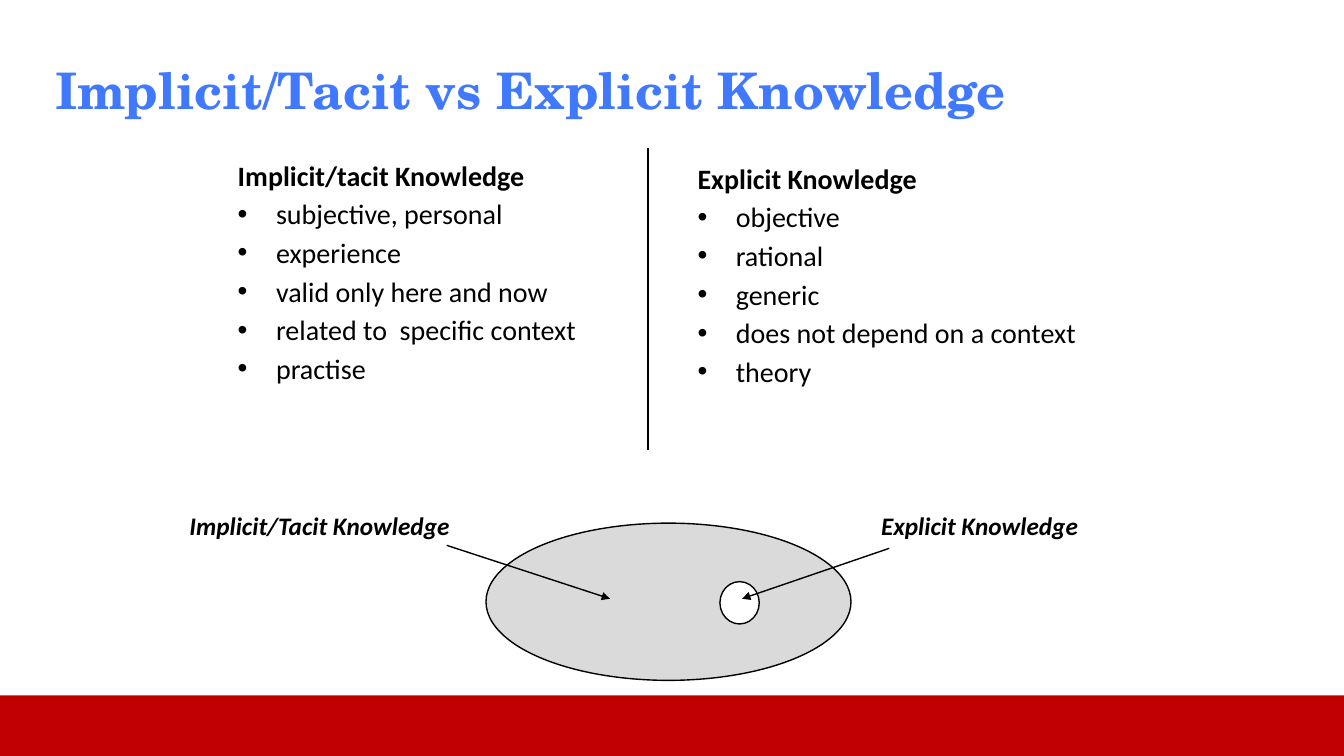
from pptx import Presentation
from pptx import util as u
from pptx.dml.color import RGBColor
from pptx.enum import shapes, text
from pptx.oxml.ns import qn
from lxml import etree

WIDTH, HEIGHT = 13.33, 7.5
COLORS = {"band": "C00000", "title": "4079FE", "ink": "000000",
          "tacit": "DADADA", "explicit": "FFFFFF"}
BODY_FONT = "Calibri"
TITLE_FONT = "TeX Gyre Schola"
INDENT = 0.38

COLUMNS = [
    ((2.26, 1.52, 3.93, 2.94), "Implicit/tacit Knowledge",
     ["subjective, personal", "experience", "valid only here and now",
      "related to  specific context", "practise"]),
    ((6.82, 1.55, 4.37, 2.68), "Explicit Knowledge",
     ["objective", "rational", "generic", "does not depend on a context", "theory"]),
]


def color(name):
    return RGBColor.from_string(COLORS[name])


def inches(*lengths):
    return [u.Inches(length) for length in lengths]


def style(para, size, font=BODY_FONT, ink="ink", bold=False, italic=False):
    para.font.size = u.Pt(size)
    para.font.name = font
    para.font.color.rgb = color(ink)
    para.font.bold = bold
    para.font.italic = italic


def add_text(page, area, wrap=True):
    frame = page.shapes.add_textbox(*inches(*area)).text_frame
    frame.word_wrap = wrap
    return frame


def add_filled(page, kind, area, fill, outline=None):
    shape = page.shapes.add_shape(kind, *inches(*area))
    shape.shadow.inherit = False
    shape.fill.solid()
    shape.fill.fore_color.rgb = color(fill)
    if outline:
        shape.line.color.rgb = color(outline)
        shape.line.width = u.Pt(1)
    else:
        shape.line.fill.background()


def add_line(page, start, end, width, arrow=False):
    line = page.shapes.add_connector(
        shapes.MSO_CONNECTOR.STRAIGHT, *inches(*start, *end))
    line.line.color.rgb = color("ink")
    line.line.width = u.Pt(width)
    if arrow:
        etree.SubElement(line.line._get_or_add_ln(), qn("a:headEnd"), type="triangle")
    etree.SubElement(line._element.spPr, qn("a:effectLst"))


def add_title(page, area, words):
    frame = add_text(page, area)
    frame.vertical_anchor = text.MSO_ANCHOR.MIDDLE
    para = frame.paragraphs[0]
    para.text = words
    style(para, 36, TITLE_FONT, "title", bold=True)


def add_column(page, area, heading, points):
    frame = add_text(page, area)
    para = frame.paragraphs[0]
    para.text = heading
    style(para, 20, bold=True)
    for point in points:
        para = frame.add_paragraph()
        para.text = point
        para.space_before = u.Pt(3.6)
        properties = para._p.get_or_add_pPr()
        properties.set("marL", str(u.Inches(INDENT)))
        properties.set("indent", str(-u.Inches(INDENT)))
        etree.SubElement(properties, qn("a:buFont"), typeface="Arial")
        etree.SubElement(properties, qn("a:buChar"), char="•")
        style(para, 20)


def add_label(page, area, words, wrap):
    para = add_text(page, area, wrap).paragraphs[0]
    para.text = words
    style(para, 18, bold=True, italic=True)


def add_diagram(page, area):
    left, top, width, height = area
    oval = shapes.MSO_SHAPE.OVAL
    add_filled(page, oval, area, "tacit", "ink")
    add_filled(page, oval, (left + 2.32, top + 0.58, 0.39, 0.42), "explicit", "ink")
    target = top + 0.75
    add_line(page, (left + 2.54, target), (left + 4, top + 0.25), 1, arrow=True)
    add_line(page, (left + 1.23, target), (left - 0.39, top + 0.22), 1, arrow=True)
    label_top = top - 0.18
    add_label(page, (left + 3.82, label_top, 2.17, 0.4), "Explicit Knowledge", False)
    add_label(page, (left - 3.04, label_top, 3.95, 0.4), "Implicit/Tacit Knowledge", True)


def main():
    deck = Presentation()
    deck.slide_width, deck.slide_height = inches(WIDTH, HEIGHT)
    page = deck.slides.add_slide(deck.slide_layouts[6])
    band = HEIGHT * 0.08
    add_filled(page, shapes.MSO_SHAPE.RECTANGLE, (0, HEIGHT - band, WIDTH, band), "band")
    add_title(page, (0.45, 0.27, 9.76, 1.24), "Implicit/Tacit vs Explicit Knowledge")
    for area, heading, points in COLUMNS:
        add_column(page, area, heading, points)
    add_diagram(page, (4.82, 5.19, 3.62, 1.56))
    add_line(page, (6.43, 1.47), (6.43, 4.46), 1.5)
    deck.save("out.pptx")


if __name__ == "__main__":
    main()
